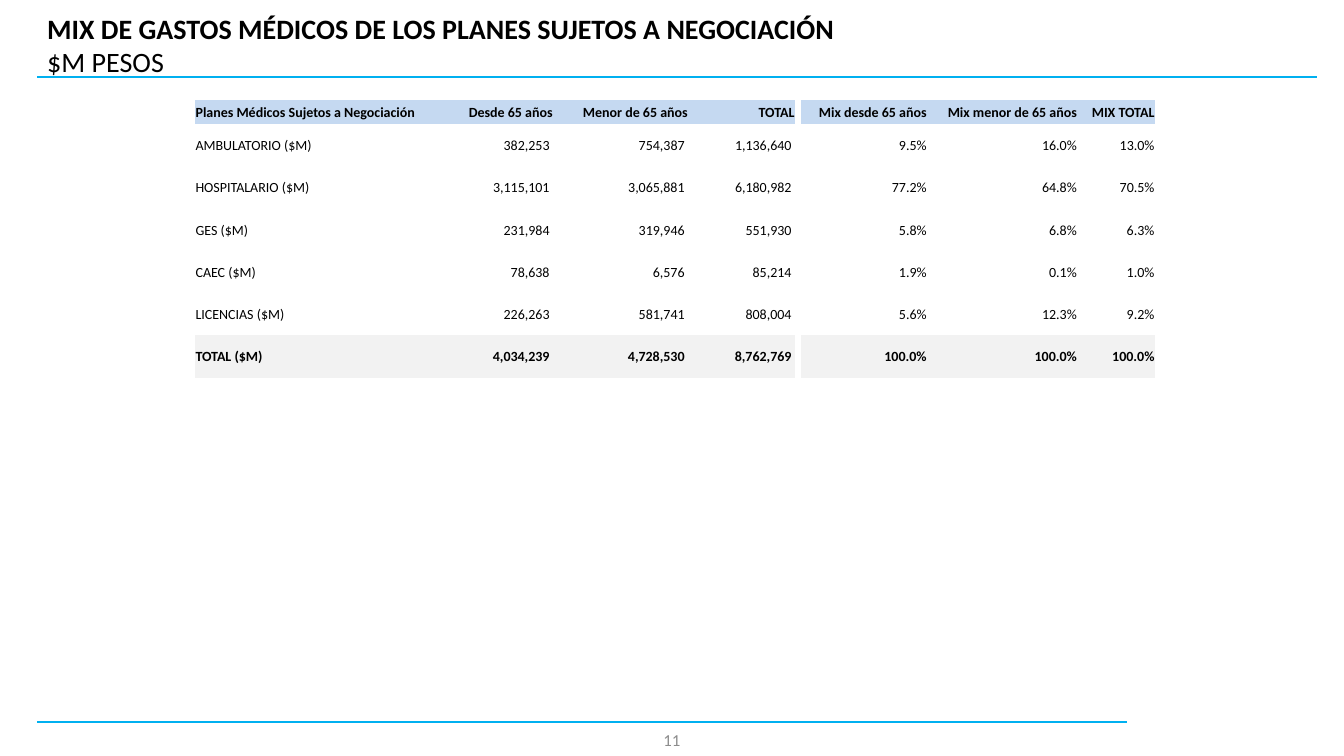
from lxml.etree import SubElement
from pptx import Presentation
from pptx.dml.color import RGBColor
from pptx.enum.shapes import MSO_CONNECTOR
from pptx.enum.text import MSO_ANCHOR, PP_ALIGN
from pptx.oxml.ns import qn
from pptx.util import Pt

PX = 9144
NO_STYLE = "{2D5ABB26-0587-4C30-8999-92F81FD0307C}"
WIDTHS = [250, 106, 134, 106, 6, 125, 149, 77]
HEIGHTS = [24] + [42] * 6
GAP = 4
ROWS = [
    ["Planes Médicos Sujetos a Negociación", "Desde 65 años", "Menor de 65 años", "TOTAL", "",
     "Mix desde 65 años", "Mix menor de 65 años", "MIX TOTAL"],
    ["AMBULATORIO ($M)", "382,253", "754,387", "1,136,640", "", "9.5%", "16.0%", "13.0%"],
    ["HOSPITALARIO ($M)", "3,115,101", "3,065,881", "6,180,982", "", "77.2%", "64.8%", "70.5%"],
    ["GES ($M)", "231,984", "319,946", "551,930", "", "5.8%", "6.8%", "6.3%"],
    ["CAEC ($M)", "78,638", "6,576", "85,214", "", "1.9%", "0.1%", "1.0%"],
    ["LICENCIAS ($M)", "226,263", "581,741", "808,004", "", "5.6%", "12.3%", "9.2%"],
    ["TOTAL ($M)", "4,034,239", "4,728,530", "8,762,769", "", "100.0%", "100.0%", "100.0%"],
]
FILLS = {0: "C5D9F1", len(ROWS) - 1: "F2F2F2"}


def color(code):
    """Turn a hex string into a colour."""
    return RGBColor.from_string(code)


def style(para, size, code, align=PP_ALIGN.LEFT):
    """Set the font and alignment of a paragraph."""
    para.alignment = align
    para.font.name = "Calibri"
    para.font.size = Pt(size)
    para.font.color.rgb = color(code)


def add_rule(slide, left, top, width):
    """Draw a horizontal blue rule."""
    rule = slide.shapes.add_connector(
        MSO_CONNECTOR.STRAIGHT, left * PX, top * PX, (left + width) * PX, top * PX)
    rule.line.color.rgb = color("00B0F0")
    rule.line.width = Pt(1.5)
    SubElement(rule.element.spPr, qn("a:effectLst"))


def add_box(slide, left, top, width, height):
    """Add a wrapped, vertically centred text box and return its paragraph."""
    frame = slide.shapes.add_textbox(left * PX, top * PX, width * PX, height * PX).text_frame
    frame.word_wrap = True
    frame.vertical_anchor = MSO_ANCHOR.MIDDLE
    return frame.paragraphs[0]


def add_header(slide, left, top, width, height):
    """Place the two-line title and the rule under it."""
    para = add_box(slide, left, top, width, height)
    style(para, 20, "000000")
    title = para.add_run()
    title.text = "MIX DE GASTOS MÉDICOS DE LOS PLANES SUJETOS A NEGOCIACIÓN"
    title.font.bold = True
    para.add_line_break()
    unit = para.add_run()
    unit.text = "$M PESOS"
    unit.font.bold = False
    add_rule(slide, left, top + height, 1269)


def add_footer(slide, left, top, width):
    """Place the bottom rule and the page number."""
    add_rule(slide, left, top, width)
    para = add_box(slide, left + 474, top - 2, 311, 40)
    para.text = "11"
    style(para, 12, "8C8C8C", PP_ALIGN.CENTER)


def fill_cell(cell, text, row, col):
    """Write and format one table cell."""
    amount = row > 0 and 0 < col < GAP
    cell.margin_left = cell.margin_top = PX
    cell.margin_right = (4 if amount else 1) * PX
    cell.margin_bottom = 0
    cell.vertical_anchor = MSO_ANCHOR.MIDDLE
    if row in FILLS and col != GAP:
        cell.fill.solid()
        cell.fill.fore_color.rgb = color(FILLS[row])
    else:
        cell.fill.background()
    cell.text = text
    para = cell.text_frame.paragraphs[0]
    style(para, 10, "000000", PP_ALIGN.RIGHT if col else PP_ALIGN.LEFT)
    para.font.bold = row in FILLS


def add_costs(slide, left, top):
    """Build the table of medical costs."""
    frame = slide.shapes.add_table(
        len(ROWS), len(WIDTHS), left * PX, top * PX, sum(WIDTHS) * PX, sum(HEIGHTS) * PX)
    table = frame.table
    table.first_row = table.horz_banding = False
    next(frame.element.iter(qn("a:tableStyleId"))).text = NO_STYLE
    for col, width in zip(table.columns, WIDTHS):
        col.width = width * PX
    for row, height in zip(table.rows, HEIGHTS):
        row.height = height * PX
    for row, texts in enumerate(ROWS):
        for col, text in enumerate(texts):
            fill_cell(table.cell(row, col), text, row, col)


def main():
    """Build and save the slide."""
    deck = Presentation()
    deck.slide_width, deck.slide_height = 1333 * PX, 750 * PX
    slide = deck.slides.add_slide(deck.slide_layouts[6])
    add_header(slide, 37, 13, 1230, 63)
    add_costs(slide, 193, 99)
    add_footer(slide, 37, 716, 1081)
    deck.save("out.pptx")


if __name__ == "__main__":
    main()
